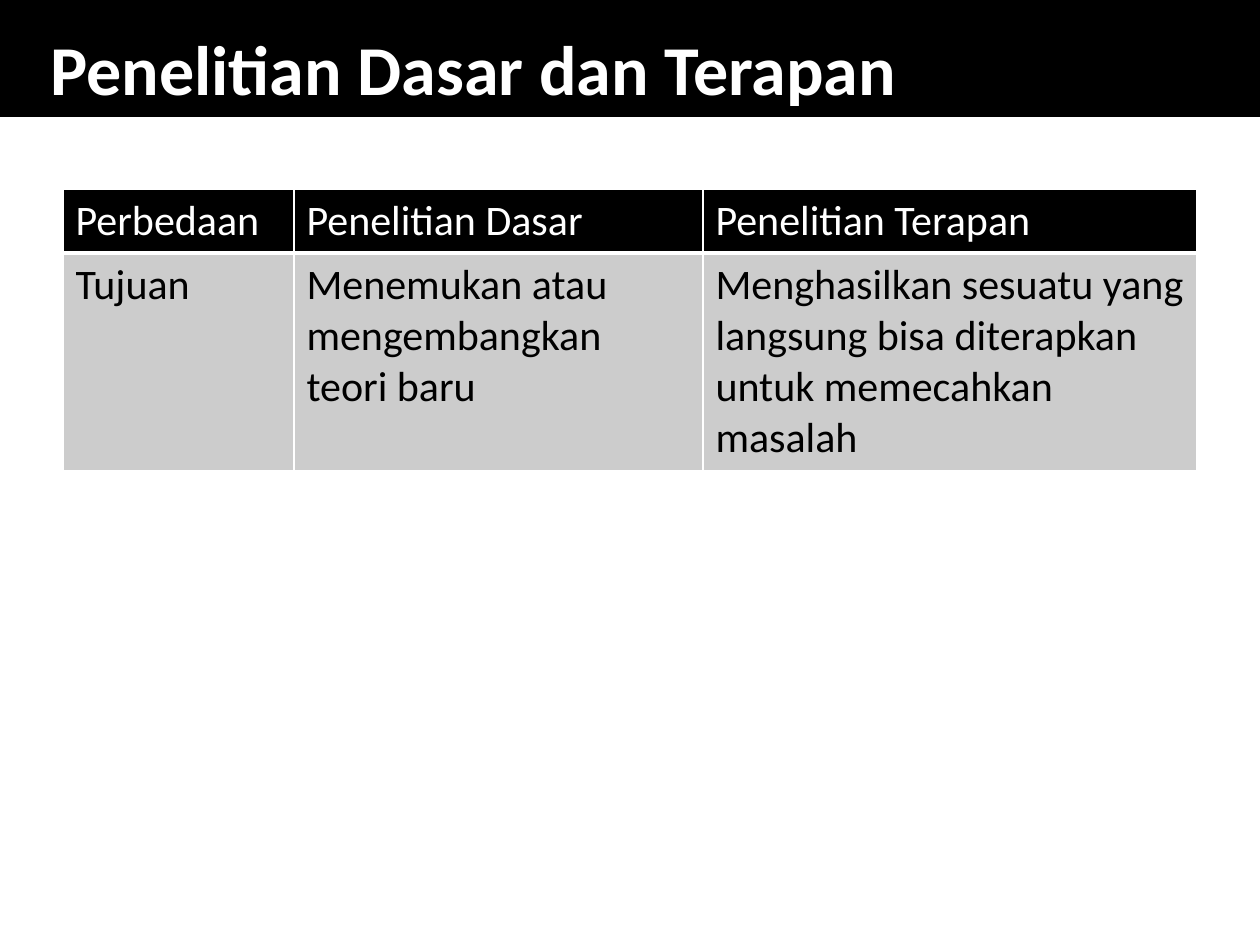
from dataclasses import dataclass

from lxml.etree import SubElement as add_element
from pptx import Presentation
from pptx.dml.color import RGBColor as Color
from pptx.enum.shapes import MSO_SHAPE as Shape
from pptx.enum.text import MSO_ANCHOR as Anchor, MSO_AUTO_SIZE as AutoSize, PP_ALIGN as Align
from pptx.oxml.ns import qn
from pptx.util import Emu, Pt


@dataclass(frozen=True)
class Theme:
    font: str = "Calibri"
    dark: str = "000000"
    light: str = "FFFFFF"
    body: str = "CCCCCC"
    title_size: int = 40
    cell_size: int = 24
    thin: int = 1
    thick: int = 3


THEME = Theme()
PAGE = (1260, 945)
HEADER_BOX = (0, 0, 1260, 116)
TABLE_BOX = (63, 189, 1134, 281)
COLUMNS = (231, 409, 494)
ROWS = (64, 217)
CELLS = (
    ("Perbedaan", "Penelitian Dasar", "Penelitian Terapan"),
    (
        "Tujuan",
        "Menemukan atau\nmengembangkan\nteori baru",
        "Menghasilkan sesuatu yang langsung bisa diterapkan untuk memecahkan masalah",
    ),
)


def px(length):
    return Emu(round(length * 914400 / 126))


def apply_format(target, values):
    for name, value in values.items():
        setattr(target, name, value)


def paint(fill, color):
    fill.solid()
    fill.fore_color.rgb = Color.from_string(color)


def write_text(frame, text, size, color, bold=False):
    frame.text = text
    for para in frame.paragraphs:
        para.alignment = Align.LEFT
        for span in para.runs:
            apply_format(span.font, {"name": THEME.font, "size": Pt(size), "bold": bold})
            span.font.color.rgb = Color.from_string(color)


def add_header(page, box, text):
    left, top, width, height = box
    bar = page.shapes.add_shape(Shape.RECTANGLE, *map(px, box))
    bar.shadow.inherit = False
    paint(bar.fill, THEME.dark)
    paint(bar.line.fill, THEME.dark)
    bar.line.width = Pt(THEME.thin)
    title = page.shapes.title
    title._element.addprevious(bar._element)
    apply_format(title, {
        "left": px(left + 38),
        "top": px(top + 26),
        "width": px(width - 81),
        "height": px(height - 26),
    })
    apply_format(title.text_frame, {
        "word_wrap": True,
        "auto_size": AutoSize.NONE,
        "vertical_anchor": Anchor.BOTTOM,
    })
    write_text(title.text_frame, text, THEME.title_size, THEME.light, bold=True)


def add_borders(cell, widths):
    properties = cell._tc.get_or_add_tcPr()
    for side, width in widths.items():
        line = add_element(properties, qn(f"a:ln{side}"), w=str(Pt(width)))
        solid = add_element(line, qn("a:solidFill"))
        add_element(solid, qn("a:srgbClr"), val=THEME.light)


def add_comparison(page, box):
    table = page.shapes.add_table(len(ROWS), len(COLUMNS), *map(px, box)).table
    apply_format(table, {"first_row": False, "horz_banding": False})
    for column, width in zip(table.columns, COLUMNS):
        column.width = px(width)
    for index, (row, height) in enumerate(zip(table.rows, ROWS)):
        row.height = px(height)
        heading = index == 0
        for cell, text in zip(row.cells, CELLS[index]):
            add_borders(cell, {
                "L": THEME.thin,
                "R": THEME.thin,
                "T": THEME.thin if heading else THEME.thick,
                "B": THEME.thick if heading else THEME.thin,
            })
            paint(cell.fill, THEME.dark if heading else THEME.body)
            write_text(cell.text_frame, text, THEME.cell_size, THEME.light if heading else THEME.dark)


def main():
    deck = Presentation()
    apply_format(deck, {"slide_width": px(PAGE[0]), "slide_height": px(PAGE[1])})
    page = deck.slides.add_slide(deck.slide_layouts.get_by_name("Title Only"))
    paint(page.background.fill, THEME.light)
    add_header(page, HEADER_BOX, "Penelitian Dasar dan Terapan")
    add_comparison(page, TABLE_BOX)
    deck.save("out.pptx")


if __name__ == "__main__":
    main()
